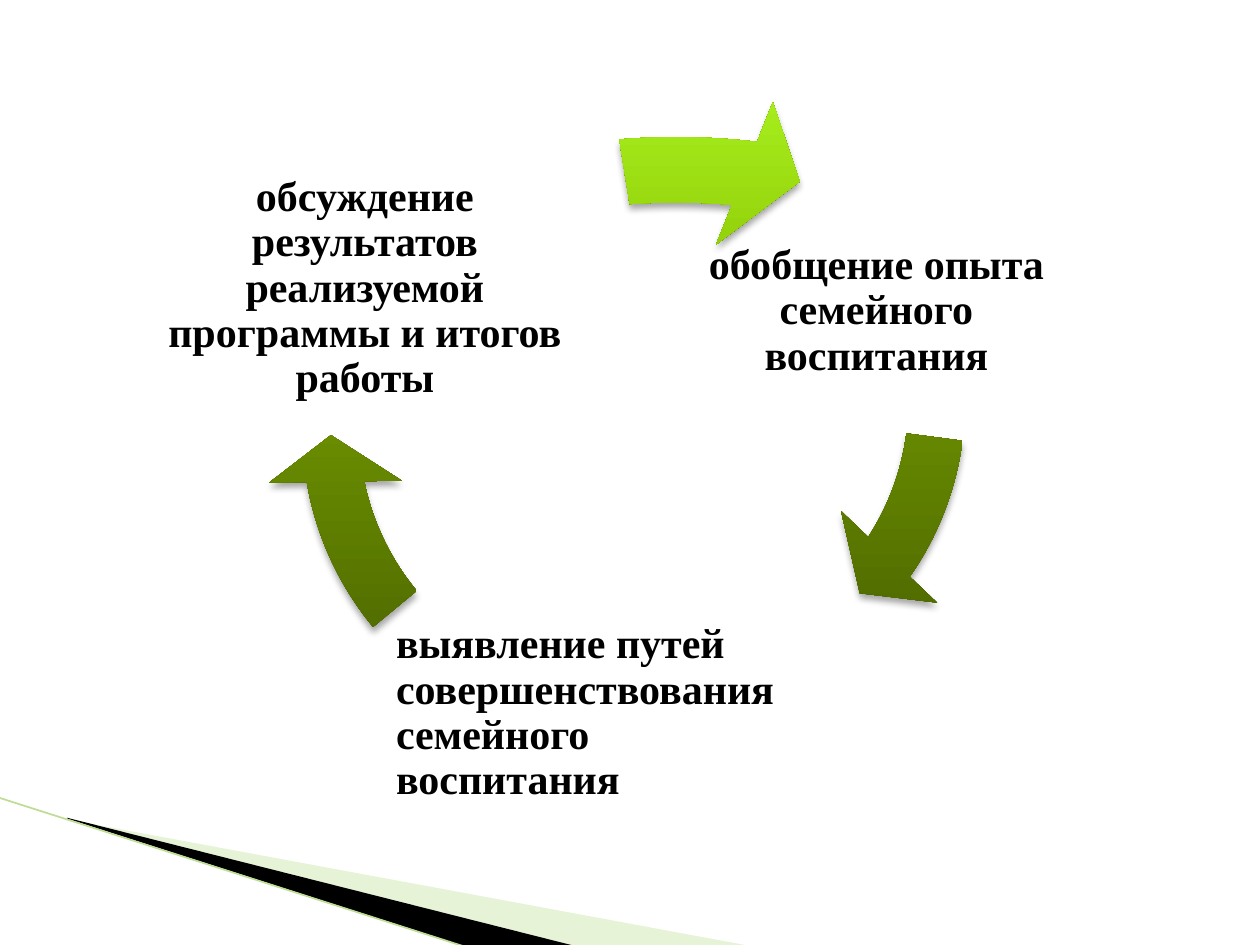
import pptx
import pptx.dml.color
import pptx.enum.shapes
import pptx.enum.text
import pptx.oxml
import pptx.oxml.ns
import pptx.util
from lxml import etree

Pt = pptx.util.Pt
RGB = pptx.dml.color.RGBColor.from_string
qn = pptx.oxml.ns.qn
NS = 'xmlns:a="http://schemas.openxmlformats.org/drawingml/2006/main"'
COLORS = {"text": "000000", "pale": "C3E19D", "black": "000000", "edge": "BDDC94", "shadow": "000000"}
GRADIENT = {0: "415700", 50: "698C00", 70: "88C100", 100: "A7EE1D"}

prs = pptx.Presentation()
prs.slide_width, prs.slide_height = Pt(720), Pt(540)
s = prs.slides.add_slide(prs.slide_layouts[6])

# Corner wedges
wedges = [
    ("pale", [(39.6, 468.5), (428.4, 540.5), (328.3, 540.5), (39.6, 468)]),
    ("black", [(38.2, 467.3), (329, 540.7), (267.8, 541.4), (38.9, 468)]),
]
for color, points in wedges:
    points = [(Pt(x), Pt(y)) for x, y in points]
    builder = s.shapes.build_freeform(*points[0], scale=1.0)
    builder.add_line_segments(points[1:], close=True)
    sp = builder.convert_to_shape()
    sp.shadow.inherit = False
    sp.fill.solid()
    sp.fill.fore_color.rgb = RGB(COLORS[color])
    sp.line.fill.background()
    if color == "pale":
        clr = sp.fill._xPr.find(qn("a:solidFill"))[0]
        etree.SubElement(clr, qn("a:alpha"), val="40000")

# Corner edge line
line = s.shapes.add_connector(pptx.enum.shapes.MSO_CONNECTOR.STRAIGHT, Pt(-0.7), Pt(455.8), Pt(267.1), Pt(541.4))
line.line.color.rgb = RGB(COLORS["edge"])
line.line.width = Pt(0.95)
etree.SubElement(line._element.spPr, qn("a:effectLst"))

# Cycle arrows: box, then head angle and start angle
arrows = [
    ((178.6, 31.7, 394.6, 394.6), 20.42, 4.489),
    ((151.2, 49, 394.6, 394.6), 101.73, 84.238),
    ((77.8, 53.3, 617, 455.8), 169.284, 156.521),
]
stops = "".join(
    f'<a:gs pos="{pos * 1000}"><a:srgbClr val="{color}"/></a:gs>' for pos, color in GRADIENT.items()
)
for box, head, start in arrows:
    sp = s.shapes.add_shape(pptx.enum.shapes.MSO_SHAPE.CIRCULAR_ARROW, *map(Pt, box))
    for i, value in enumerate((0.082, 5.761, head, start, 0.096)):
        sp.adjustments[i] = value
    sp.line.fill.background()
    sp.shadow.inherit = False
    spPr = sp._element.spPr
    spPr.find(qn("a:prstGeom")).addnext(pptx.oxml.parse_xml(
        f'<a:gradFill {NS} rotWithShape="1"><a:gsLst>{stops}</a:gsLst>'
        '<a:lin ang="16200000" scaled="0"/></a:gradFill>'))
    spPr.find(qn("a:effectLst")).append(pptx.oxml.parse_xml(
        f'<a:outerShdw {NS} blurRad="{Pt(4)}" dist="{Pt(3)}" dir="5400000" rotWithShape="0">'
        f'<a:srgbClr val="{COLORS["shadow"]}"><a:alpha val="35000"/></a:srgbClr></a:outerShdw>'))

# Cycle steps
ALIGN = pptx.enum.text.PP_ALIGN
steps = [
    (377.3, 94.3, ALIGN.CENTER, "обобщение опыта семейного воспитания"),
    (223.9, 324, ALIGN.LEFT, "выявление путей совершенствования семейного воспитания"),
    (85, 81.4, ALIGN.CENTER, "обсуждение результатов реализуемой программы и итогов работы"),
]
frame_format = {
    "word_wrap": True, "vertical_anchor": pptx.enum.text.MSO_ANCHOR.MIDDLE,
    "margin_left": Pt(2.4), "margin_right": Pt(2.4), "margin_top": Pt(2.4), "margin_bottom": Pt(2.4),
}
font_format = {"name": "Times New Roman", "size": Pt(24), "bold": True}
for left, top, align, text in steps:
    tf = s.shapes.add_textbox(Pt(left), Pt(top), Pt(247), Pt(167)).text_frame
    for name, value in frame_format.items():
        setattr(tf, name, value)
    p = tf.paragraphs[0]
    p.alignment = align
    p.line_spacing = 0.9
    r = p.add_run()
    r.text = text
    for name, value in font_format.items():
        setattr(r.font, name, value)
    r.font.color.rgb = RGB(COLORS["text"])

prs.save("out.pptx")
